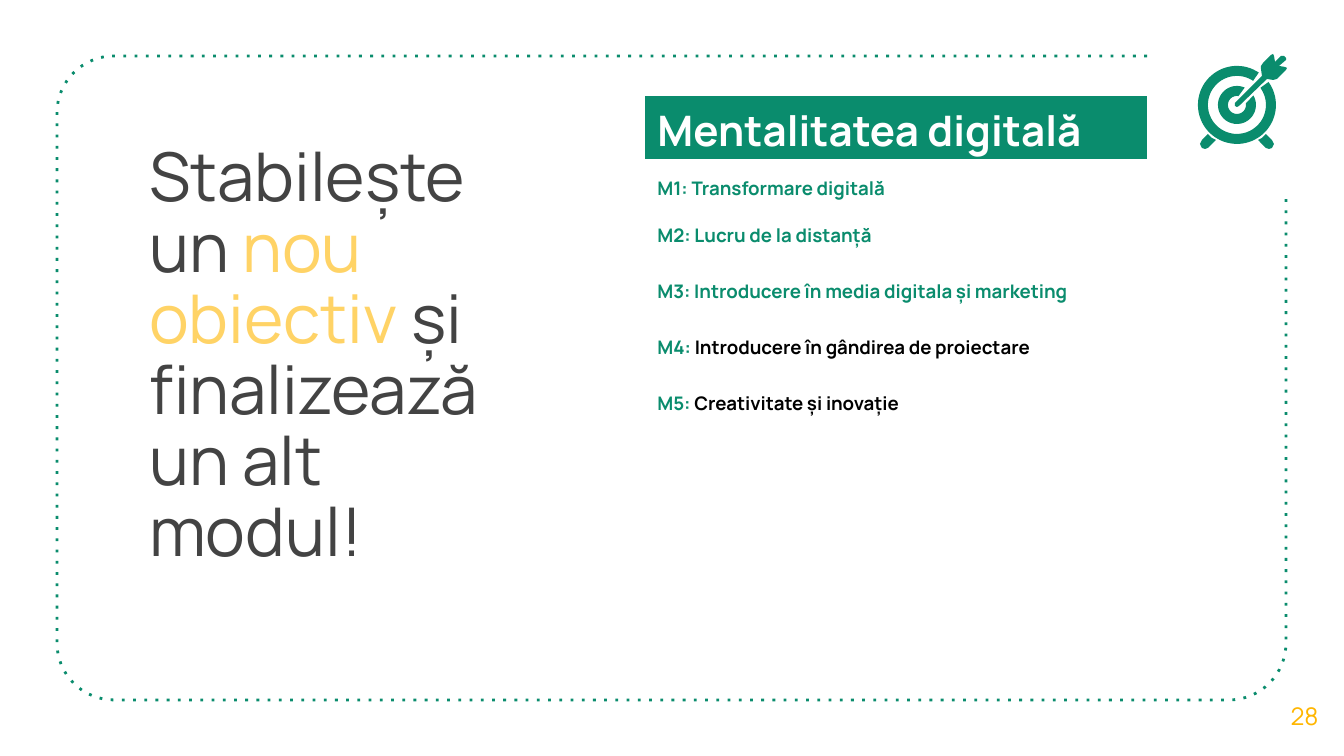
import math

import pptx
import pptx.dml.color
import pptx.enum.text
import pptx.oxml
import pptx.oxml.ns
import pptx.util

SLIDE_WIDTH, SLIDE_HEIGHT = 1344, 756
PX = pptx.util.Inches(10) / SLIDE_WIDTH
FONT = "Manrope"
COLORS = {
    "green": "0A8C6D",
    "amber": "FFB600",
    "yellow": "FFD366",
    "gray": "434343",
    "white": "FFFFFF",
    "black": "000000",
}
MODULES = [
    [("M1: Transformare digitală", "green")],
    [("M2: Lucru de la distanță", "green")],
    [("M3: Introducere în media digitala și marketing", "green")],
    [("M4: ", "green"), ("Introducere în gândirea de proiectare", "black")],
    [("M5: ", "green"), ("Creativitate și inovație", "black")],
]


def emu(px):
    return round(px * PX)


def rgb(name):
    return pptx.dml.color.RGBColor.from_string(COLORS[name])


def write_text(text_frame, runs, size, bold=False, align=None, spacing=None):
    """Write (text, color name) runs as one paragraph."""
    paragraph = text_frame.paragraphs[0]
    paragraph.alignment = align
    paragraph.line_spacing = spacing
    for text, color in runs:
        run = paragraph.add_run()
        run.text = text
        run.font.name = FONT
        run.font.size = pptx.util.Pt(size)
        run.font.bold = bold
        run.font.color.rgb = rgb(color)


def add_text(slide, box, runs, anchor=pptx.enum.text.MSO_ANCHOR.TOP, **text_format):
    text_frame = slide.shapes.add_textbox(*map(emu, box)).text_frame
    text_frame.word_wrap = True
    text_frame.vertical_anchor = anchor
    text_frame.margin_top = text_frame.margin_bottom = emu(13)
    write_text(text_frame, runs, **text_format)


def arc(center_x, center_y, radius, start, end, steps):
    """Points from start to end, in degrees clockwise from the right."""
    angles = [math.radians(start + (end - start) * i / steps) for i in range(steps + 1)]
    return [(center_x + radius * math.cos(a), center_y + radius * math.sin(a))
            for a in angles]


def add_outline(slide, left, top, points, closed=True):
    vertices = [(emu(left + x), emu(top + y)) for x, y in points]
    builder = slide.shapes.build_freeform(*vertices[0], scale=1.0)
    builder.add_line_segments(vertices[1:], close=closed)
    outline = builder.convert_to_shape()
    outline.shadow.inherit = False
    return outline


def add_dotted_frame(slide, left, top, width, height):
    """Rounded frame left open at its top right corner."""
    radius = 57
    right, bottom = width - radius, height - radius
    points = [
        (width - 139, 0),
        *arc(radius, radius, radius, 270, 180, 16),
        *arc(radius, bottom, radius, 180, 90, 16),
        *arc(right, bottom, radius, 90, 0, 16),
        (width, 140),
    ]
    frame = add_outline(slide, left, top, points, closed=False)
    frame.fill.background()
    frame.line.color.rgb = rgb("green")
    frame.line.width = pptx.util.Pt(1.5)
    line = frame._element.spPr.find(pptx.oxml.ns.qn("a:ln"))
    line.append(pptx.oxml.parse_xml(
        f'<a:prstDash {pptx.oxml.ns.nsdecls("a")} val="dot"/>'))


def add_target_icon(slide, left, top, width):
    center = (39, 51)
    outer_ring = arc(*center, 39, -36, 304, 72) + arc(*center, 29, 304, -36, 72)
    inner_ring = arc(*center, 19, -30, 294, 48) + arc(*center, 9, 280, -10, 48)
    left_foot = [(10, 80), (4, 86), (2, 90), (4, 94), (7, 95), (10, 94),
                 (18, 86), (14, 84)]
    right_foot = [(2 * center[0] - x, y) for x, y in left_foot]
    arrow = [
        (75, 0), (73, 1), (65, 9), (63, 12), (63, 15), (64, 22), (37, 49),
        (37, 52), (39, 53), (41, 52), (69, 25), (75, 26), (79, 25), (88, 16),
        (width, 14), (87, 13), (81, 12), (88, 6), (88, 4), (86, 2), (83, 2),
        (77, 8), (76, 2),
    ]
    for part in (outer_ring, inner_ring, left_foot, right_foot, arrow):
        outline = add_outline(slide, left, top, part)
        outline.fill.solid()
        outline.fill.fore_color.rgb = rgb("green")
        outline.line.fill.background()


def add_module_table(slide, left, top, width, header_height, row_height):
    height = header_height + row_height * len(MODULES)
    table = slide.shapes.add_table(
        len(MODULES) + 1, 1, *map(emu, (left, top, width, height))).table
    table.first_row = table.horz_banding = False

    header = table.cell(0, 0)
    table.rows[0].height = emu(header_height)
    header.fill.solid()
    header.fill.fore_color.rgb = rgb("green")
    write_text(header.text_frame, [("Mentalitatea digitală", "white")], 22.5, bold=True)

    for row, runs in enumerate(MODULES, start=1):
        table.rows[row].height = emu(row_height)
        module = table.cell(row, 0)
        module.fill.background()
        write_text(module.text_frame, runs, 10, bold=True)
    table.cell(1, 0).vertical_anchor = pptx.enum.text.MSO_ANCHOR.MIDDLE


def add_goal_slide(presentation):
    slide = presentation.slides.add_slide(presentation.slide_layouts[6])
    add_dotted_frame(slide, 57, 56, 1229, 644)
    add_text(slide, (1265, 675, 79, 81), [("28", "amber")], size=13,
             anchor=pptx.enum.text.MSO_ANCHOR.MIDDLE,
             align=pptx.enum.text.PP_ALIGN.CENTER)
    add_target_icon(slide, 1198, 54, 89)
    add_module_table(slide, 644, 95, 504, header_height=65, row_height=56)
    add_text(slide, (136, 132, 399, 520), [
        ("Stabilește un ", "gray"),
        ("nou obiectiv ", "yellow"),
        ("și finalizează un alt modul!", "gray"),
    ], size=36, spacing=0.88)


def main():
    presentation = pptx.Presentation()
    presentation.slide_width = emu(SLIDE_WIDTH)
    presentation.slide_height = emu(SLIDE_HEIGHT)
    add_goal_slide(presentation)
    presentation.save("out.pptx")


if __name__ == "__main__":
    main()
